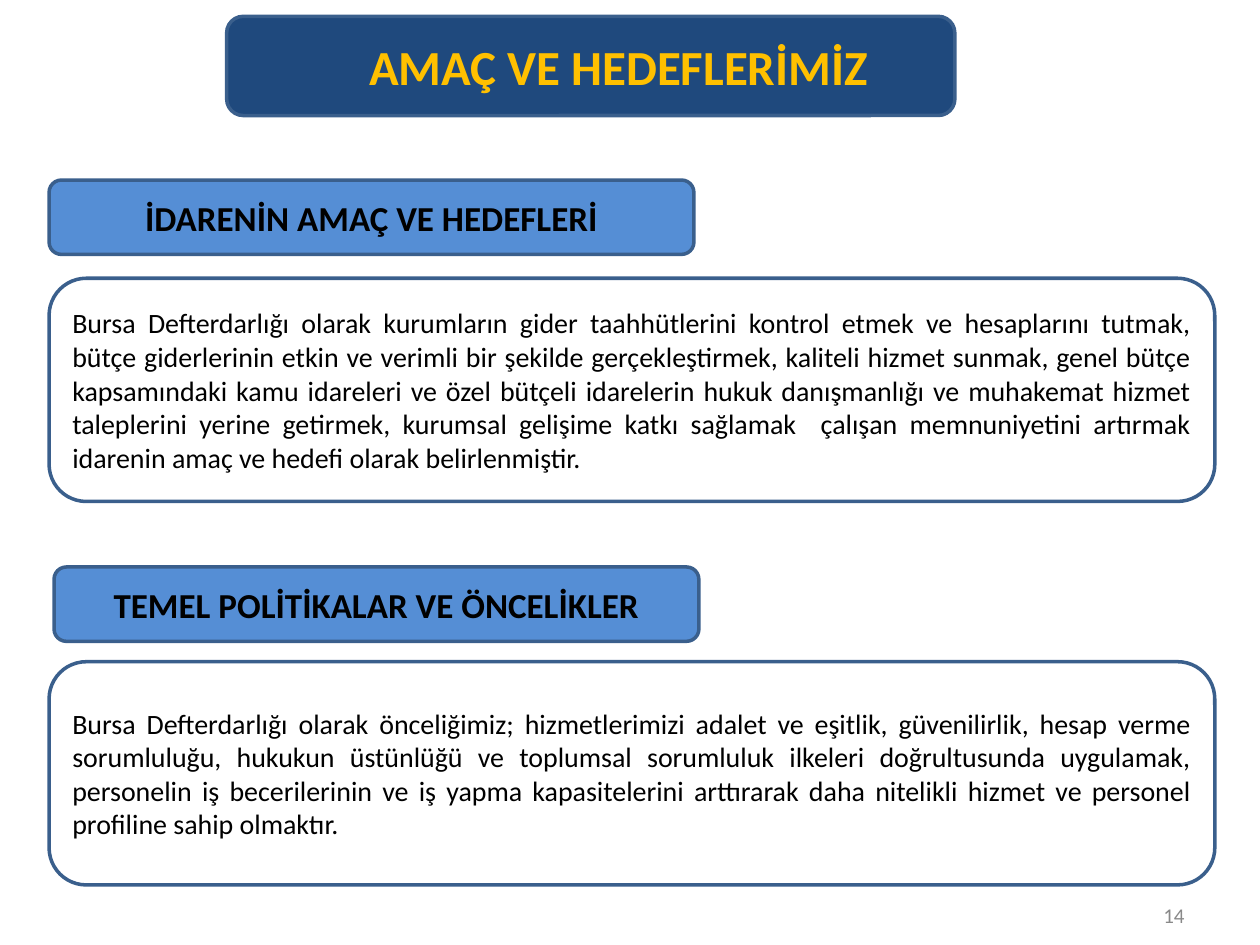
from pptx import Presentation
from pptx.dml.color import RGBColor
from pptx.enum.shapes import MSO_SHAPE
from pptx.enum.text import MSO_ANCHOR, MSO_AUTO_SIZE, PP_ALIGN
from pptx.util import Cm, Pt

ROUNDED = MSO_SHAPE.ROUNDED_RECTANGLE
MIDDLE = MSO_ANCHOR.MIDDLE
NO_AUTOFIT = MSO_AUTO_SIZE.NONE
LEFT, CENTER, RIGHT, JUSTIFY = PP_ALIGN.LEFT, PP_ALIGN.CENTER, PP_ALIGN.RIGHT, PP_ALIGN.JUSTIFY

NAVY = RGBColor(0x1F, 0x49, 0x7D)
BLUE = RGBColor(0x55, 0x8E, 0xD5)
OUTLINE = RGBColor(0x3A, 0x5F, 0x8C)
GOLD = RGBColor(0xFF, 0xC0, 0x00)
BLACK = RGBColor(0x00, 0x00, 0x00)
GRAY = RGBColor(0x89, 0x89, 0x89)

FONT = "Calibri"
HEADING_WIDTH, HEADING_HEIGHT = Cm(13), Cm(1.5)
BODY_LEFT, BODY_WIDTH, BODY_HEIGHT = Cm(0.99), Cm(23.5), Cm(4.5)

SECTIONS = [
    (
        "İDARENİN AMAÇ VE HEDEFLERİ",
        "Bursa Defterdarlığı olarak kurumların gider taahhütlerini kontrol etmek ve "
        "hesaplarını tutmak, bütçe giderlerinin etkin ve verimli bir şekilde "
        "gerçekleştirmek, kaliteli hizmet sunmak, genel bütçe kapsamındaki kamu "
        "idareleri ve özel bütçeli idarelerin hukuk danışmanlığı ve muhakemat hizmet "
        "taleplerini yerine getirmek, kurumsal gelişime katkı sağlamak  çalışan "
        "memnuniyetini artırmak idarenin amaç ve hedefi olarak belirlenmiştir.",
        (Cm(0.99), Cm(3.63)),
        Cm(5.61),
    ),
    (
        "TEMEL POLİTİKALAR VE ÖNCELİKLER",
        "Bursa Defterdarlığı olarak önceliğimiz; hizmetlerimizi adalet ve eşitlik, "
        "güvenilirlik, hesap verme sorumluluğu, hukukun üstünlüğü ve toplumsal "
        "sorumluluk ilkeleri doğrultusunda uygulamak, personelin iş becerilerinin ve "
        "iş yapma kapasitelerini arttırarak daha nitelikli hizmet ve personel "
        "profiline sahip olmaktır.",
        (Cm(1.09), Cm(11.43)),
        Cm(13.34),
    ),
]


def write_text(shape, text, size, color, alignment, bold=False):
    """Fill a shape with one formatted, vertically centred paragraph."""
    frame = shape.text_frame
    frame.word_wrap = True
    frame.auto_size = NO_AUTOFIT
    frame.vertical_anchor = MIDDLE
    frame.text = text
    paragraph = frame.paragraphs[0]
    paragraph.alignment = alignment
    font = paragraph.font
    font.name, font.size, font.bold = FONT, Pt(size), bold
    font.color.rgb = color


def add_panel(slide, box, fill=None):
    """Add an outlined rounded rectangle, hollow unless a fill is given."""
    panel = slide.shapes.add_shape(ROUNDED, *box)
    panel.shadow.inherit = False
    if fill is None:
        panel.fill.background()
    else:
        panel.fill.solid()
        panel.fill.fore_color.rgb = fill
    panel.line.color.rgb = OUTLINE
    panel.line.width = Pt(2)
    return panel


def add_title(slide, box, text):
    """Set the title placeholder on top of a navy banner."""
    banner = add_panel(slide, box, NAVY)
    title = slide.shapes.title
    title.left, title.top, title.width, title.height = box
    write_text(title, text, 28, GOLD, LEFT, bold=True)
    title.text_frame.margin_left = Cm(2.87)
    banner._element.addnext(title._element)


def add_section(slide, heading, body, heading_position, body_top):
    """Add a blue heading and the outlined body text below it."""
    heading_box = (*heading_position, HEADING_WIDTH, HEADING_HEIGHT)
    heading_panel = add_panel(slide, heading_box, BLUE)
    write_text(heading_panel, heading, 20, BLACK, CENTER, bold=True)
    body_panel = add_panel(slide, (BODY_LEFT, body_top, BODY_WIDTH, BODY_HEIGHT))
    write_text(body_panel, body, 16, BLACK, JUSTIFY)


def add_slide_number(slide, box, number):
    """Add the page number in the bottom corner."""
    write_text(slide.shapes.add_textbox(*box), number, 12, GRAY, RIGHT)


def main():
    """Build and save the goals slide."""
    presentation = Presentation()
    presentation.slide_width, presentation.slide_height = Cm(25.4), Cm(19.05)
    slide = presentation.slides.add_slide(presentation.slide_layouts[5])
    add_title(slide, (Cm(4.57), Cm(0.33), Cm(14.68), Cm(2)), "AMAÇ VE HEDEFLERİMİZ")
    for section in SECTIONS:
        add_section(slide, *section)
    add_slide_number(slide, (Cm(18.21), Cm(17.93), Cm(5.92), Cm(1.02)), "14")
    presentation.save("out.pptx")


if __name__ == "__main__":
    main()
